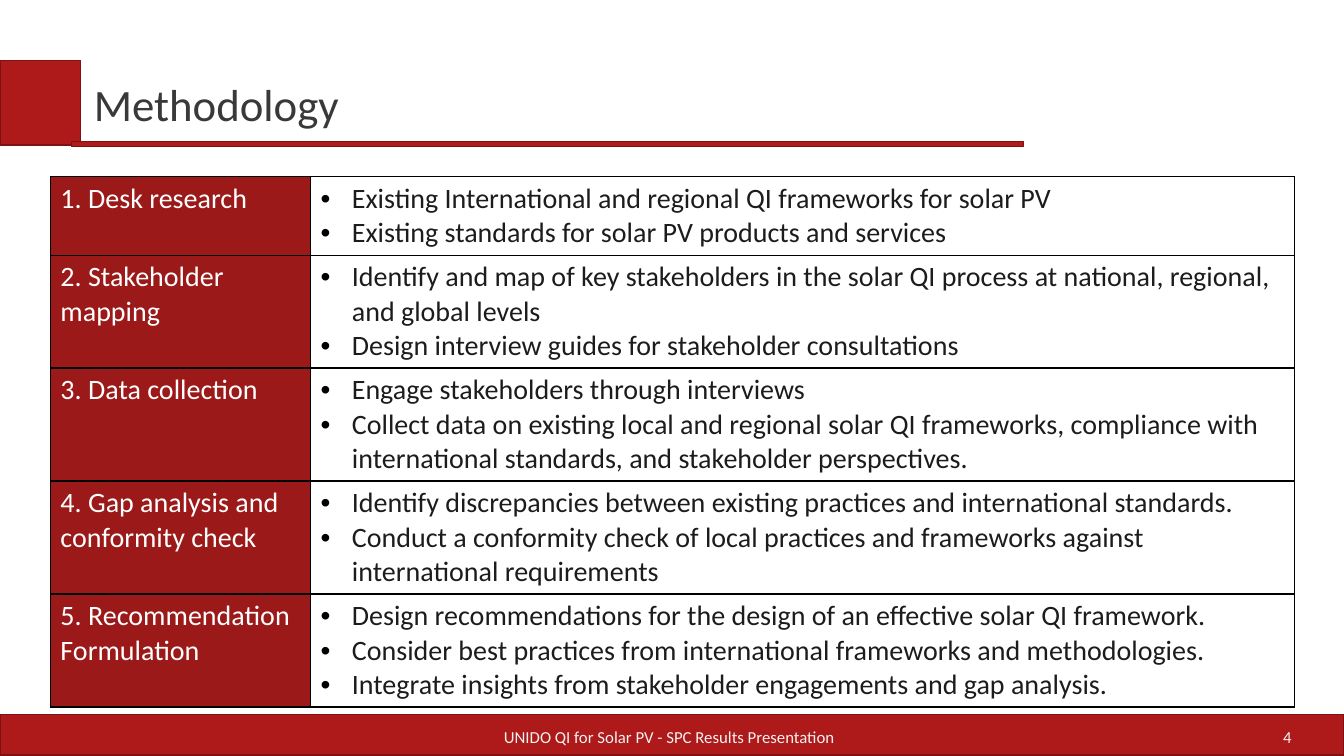
from dataclasses import dataclass

from lxml import etree
from pptx import Presentation
from pptx.dml.color import RGBColor
from pptx.enum.shapes import MSO_SHAPE
from pptx.enum.text import MSO_ANCHOR, PP_ALIGN
from pptx.oxml.ns import qn
from pptx.util import Inches, Pt

RECTANGLE = MSO_SHAPE.RECTANGLE
MIDDLE = MSO_ANCHOR.MIDDLE
LEFT, CENTER, RIGHT = PP_ALIGN.LEFT, PP_ALIGN.CENTER, PP_ALIGN.RIGHT

FONT = "Calibri"
RED, DARK_RED, STEP_RED = "AE1919", "7E1212", "9B1919"
WHITE, PALE, BLACK = "FFFFFF", "F2F2F2", "000000"
TITLE_GREY, BODY_GREY = "3A3838", "1D1C1C"
LINE_HEIGHT, CELL_PADDING, BULLET_INDENT = 0.34, 0.1, 0.31


@dataclass(frozen=True)
class Box:
    left: float
    top: float
    width: float
    height: float

    def lengths(self) -> tuple:
        return tuple(Inches(v) for v in (self.left, self.top, self.width, self.height))


@dataclass(frozen=True)
class Step:
    name: str
    tasks: tuple[str, ...]
    lines: int = 3


BARS = (
    Box(0, 7.09, 13.33, 0.4),
    Box(0, 0.6, 0.8, 0.84),
    Box(0.71, 1.4, 9.44, 0.05),
)
TITLE_BOX = Box(0.83, 0.6, 8.38, 0.92)
FOOTER_BOX = Box(3.61, 7.11, 6.06, 0.4)
NUMBER_BOX = Box(9.77, 7.11, 3.14, 0.4)
COLUMN_WIDTHS = (2.58, 9.76)

STEPS = (
    Step("1. Desk research", (
        "Existing International and regional QI frameworks for solar PV",
        "Existing standards for solar PV products and services"), lines=2),
    Step("2. Stakeholder mapping", (
        "Identify and map of key stakeholders in the solar QI process at national, "
        "regional, and global levels",
        "Design interview guides for stakeholder consultations")),
    Step("3. Data collection", (
        "Engage stakeholders through interviews",
        "Collect data on existing local and regional solar QI frameworks, compliance "
        "with international standards, and stakeholder perspectives.")),
    Step("4. Gap analysis and conformity check", (
        "Identify discrepancies between existing practices and international standards.",
        "Conduct a conformity check of local practices and frameworks against "
        "international requirements")),
    Step("5. Recommendation Formulation", (
        "Design recommendations for the design of an effective solar QI framework.",
        "Consider best practices from international frameworks and methodologies.",
        "Integrate insights from stakeholder engagements and gap analysis.")),
)


def color(value: str) -> RGBColor:
    return RGBColor.from_string(value)


def add_bullet(paragraph) -> None:
    properties = paragraph._p.get_or_add_pPr()
    properties.set("marL", str(Inches(BULLET_INDENT)))
    properties.set("indent", str(-Inches(BULLET_INDENT)))
    bullet_color = etree.SubElement(properties, qn("a:buClr"))
    etree.SubElement(bullet_color, qn("a:srgbClr"), val=BLACK)
    etree.SubElement(properties, qn("a:buFont"), typeface="Arial")
    etree.SubElement(properties, qn("a:buChar"), char="•")


def write_text(frame, *lines: str, size: float, ink: str, align=LEFT,
               bullets: bool = False, spacing: float = 1.0) -> None:
    frame.word_wrap = True
    for index, line in enumerate(lines):
        paragraph = frame.add_paragraph() if index else frame.paragraphs[0]
        if bullets:
            add_bullet(paragraph)
        paragraph.alignment = align
        paragraph.line_spacing = spacing
        run = paragraph.add_run()
        run.text = line
        run.font.name = FONT
        run.font.size = Pt(size)
        run.font.bold = False
        run.font.color.rgb = color(ink)


def add_bar(slide, box: Box) -> None:
    shape = slide.shapes.add_shape(RECTANGLE, *box.lengths())
    shape.shadow.inherit = False
    shape.fill.solid()
    shape.fill.fore_color.rgb = color(RED)
    shape.line.color.rgb = color(DARK_RED)
    shape.line.width = Pt(0.85)


def add_title(slide, text: str) -> None:
    title = slide.shapes.title
    title.left, title.top, title.width, title.height = TITLE_BOX.lengths()
    title.text_frame.vertical_anchor = MIDDLE
    write_text(title.text_frame, text, size=32, ink=TITLE_GREY, spacing=0.9)


def add_footer_text(slide, box: Box, text: str, align) -> None:
    frame = slide.shapes.add_textbox(*box.lengths()).text_frame
    frame.vertical_anchor = MIDDLE
    write_text(frame, text, size=12, ink=PALE, align=align)


def add_borders(cell) -> None:
    properties = cell._tc.get_or_add_tcPr()
    for side in ("lnL", "lnR", "lnT", "lnB"):
        line = etree.SubElement(properties, qn(f"a:{side}"), w=str(Pt(1)))
        fill = etree.SubElement(line, qn("a:solidFill"))
        etree.SubElement(fill, qn("a:srgbClr"), val=BLACK)


def add_steps_table(slide) -> None:
    heights = [CELL_PADDING + LINE_HEIGHT * step.lines for step in STEPS]
    box = Box(0.5, 1.75, sum(COLUMN_WIDTHS), sum(heights))
    table = slide.shapes.add_table(len(STEPS), len(COLUMN_WIDTHS), *box.lengths()).table
    table.first_row = table.horz_banding = False
    for column, width in zip(table.columns, COLUMN_WIDTHS):
        column.width = Inches(width)
    for row, height, step in zip(table.rows, heights, STEPS):
        row.height = Inches(height)
        name_cell, tasks_cell = row.cells
        for cell, fill in ((name_cell, STEP_RED), (tasks_cell, WHITE)):
            add_borders(cell)
            cell.fill.solid()
            cell.fill.fore_color.rgb = color(fill)
        write_text(name_cell.text_frame, step.name, size=20, ink=WHITE)
        write_text(tasks_cell.text_frame, *step.tasks, size=20, ink=BODY_GREY, bullets=True)


def main() -> None:
    presentation = Presentation()
    presentation.slide_width = Inches(13.33)
    presentation.slide_height = Inches(7.5)
    slide = presentation.slides.add_slide(presentation.slide_layouts.get_by_name("Title Only"))

    # Red bars and title
    for bar in BARS:
        add_bar(slide, bar)
    add_title(slide, "Methodology")

    # Methodology steps
    add_steps_table(slide)

    # Footer
    add_footer_text(slide, FOOTER_BOX, "UNIDO QI for Solar PV - SPC Results Presentation", CENTER)
    add_footer_text(slide, NUMBER_BOX, "4", RIGHT)

    presentation.save("out.pptx")


if __name__ == "__main__":
    main()
